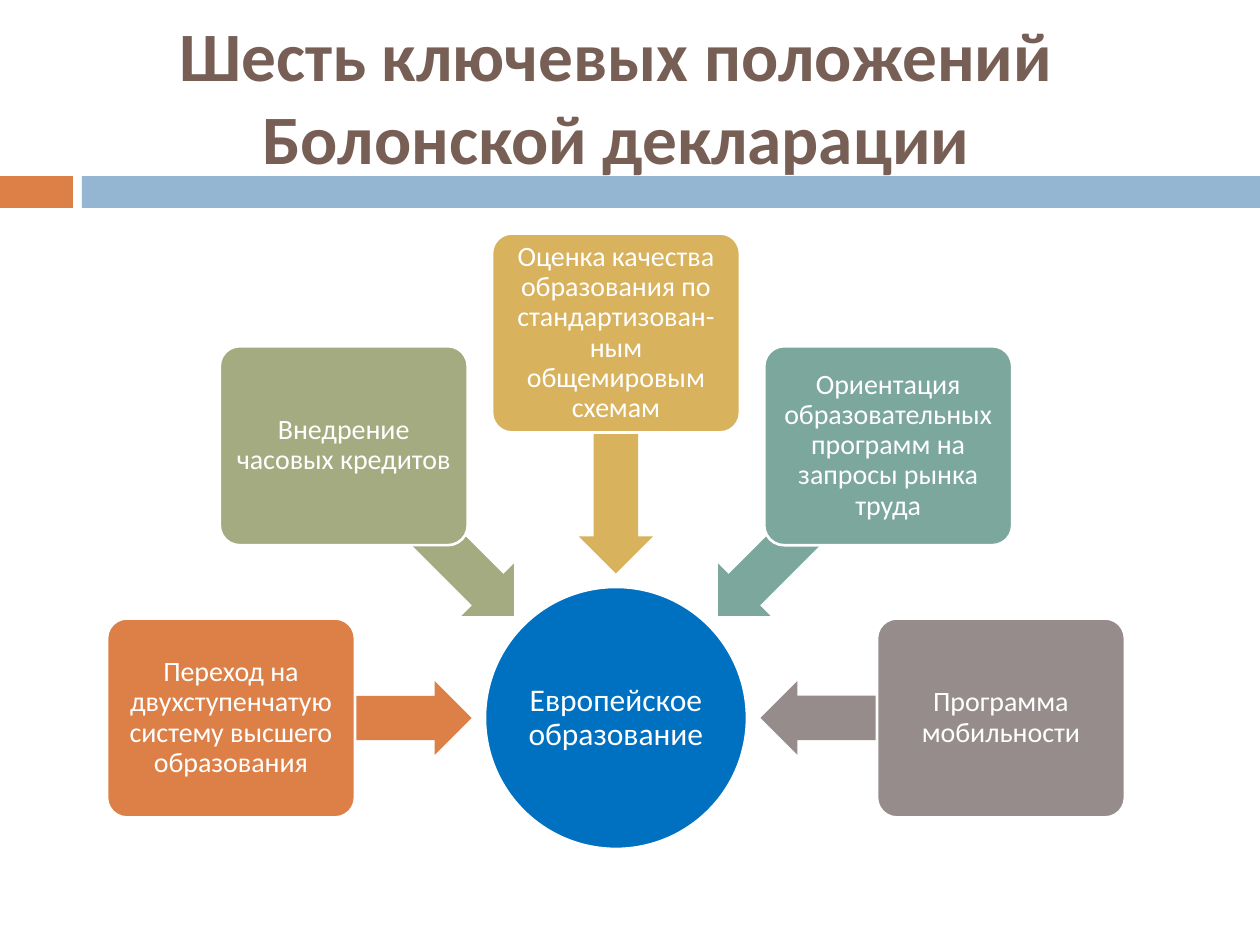
from math import cos, radians, sin

from pptx import Presentation
from pptx.dml.color import RGBColor
from pptx.enum.shapes import MSO_SHAPE
from pptx.enum.text import MSO_ANCHOR, PP_ALIGN
from pptx.util import Emu, Pt

SCALE = 914400 / 126
WHITE = RGBColor(0xFF, 0xFF, 0xFF)
BROWN = RGBColor(0x77, 0x5F, 0x55)
ORANGE = RGBColor(0xDD, 0x80, 0x47)
LIGHT_BLUE = RGBColor(0x94, 0xB6, 0xD2)
BLUE = RGBColor(0x00, 0x70, 0xC0)
OLIVE = RGBColor(0xA5, 0xAB, 0x81)
GOLD = RGBColor(0xD8, 0xB2, 0x5C)
TEAL = RGBColor(0x7B, 0xA7, 0x9D)
GREY = RGBColor(0x96, 0x8C, 0x8C)

PROVISIONS = [
    ("Переход на двухступенчатую систему высшего образования", ORANGE),
    ("Внедрение часовых кредитов", OLIVE),
    ("Оценка качества образования по стандартизован-ным общемировым схемам", GOLD),
    ("Ориентация образовательных программ на запросы рынка труда", TEAL),
    ("Программа мобильности", GREY),
]


def px(length):
    return Emu(round(length * SCALE))


def add_block(slide, preset, box, color, outlined=False):
    block = slide.shapes.add_shape(preset, *map(px, box))
    block.shadow.inherit = False
    block.fill.solid()
    block.fill.fore_color.rgb = color
    if outlined:
        block.line.color.rgb = WHITE
        block.line.width = Pt(1.5)
    else:
        block.line.fill.background()
    return block


def write(holder, text, font_format, inset=None, paragraph_format=None):
    frame = holder.text_frame
    frame.word_wrap = True
    frame.vertical_anchor = MSO_ANCHOR.MIDDLE
    if inset is not None:
        for side in ("left", "top", "right", "bottom"):
            setattr(frame, f"margin_{side}", px(inset))
    paragraph = frame.paragraphs[0]
    paragraph.alignment = PP_ALIGN.CENTER
    for name, value in (paragraph_format or {}).items():
        setattr(paragraph, name, value)
    run = paragraph.add_run()
    run.text = text
    run.font.color.rgb = font_format["color"]
    for name in ("name", "size", "bold"):
        setattr(run.font, name, font_format.get(name))


def add_header(slide, left, top, width, height):
    band_height, accent_width, gap = 32, 73, 9
    band_top = top + height - band_height
    band_left = left + accent_width + gap
    add_block(slide, MSO_SHAPE.RECTANGLE, (left, band_top, accent_width, band_height), ORANGE)
    add_block(slide, MSO_SHAPE.RECTANGLE,
              (band_left, band_top, left + width - band_left, band_height), LIGHT_BLUE)
    title = slide.shapes.add_textbox(*map(px, (left + 54, top + 27, 1124, 136)))
    write(title, "Шесть ключевых положений Болонской декларации",
          {"name": "Calibri", "size": Pt(39.6), "bold": True, "color": BROWN})


def add_radial_diagram(slide, left, top, width, height):
    hub_size, card_width, card_height = 262, 248, 199
    arrow_width, arrow_height = 239, 74
    card_radius, arrow_radius = 385, 264
    center_x = left + width / 2
    center_y = top + height - hub_size / 2
    text_format = {"name": "Calibri", "size": Pt(16), "color": WHITE}
    spacing = {"line_spacing": 0.9}

    def centered(angle, radius, part_width, part_height):
        return (center_x + radius * cos(radians(angle)) - part_width / 2,
                center_y + radius * sin(radians(angle)) - part_height / 2,
                part_width, part_height)

    hub = add_block(slide, MSO_SHAPE.OVAL, centered(0, 0, hub_size, hub_size), BLUE, True)
    write(hub, "Европейское образование", {**text_format, "size": Pt(18)}, 1, spacing)

    for index, (provision, color) in enumerate(PROVISIONS):
        angle = 180 + index * 180 / (len(PROVISIONS) - 1)
        arrow = add_block(slide, MSO_SHAPE.LEFT_ARROW,
                          centered(angle, arrow_radius, arrow_width, arrow_height), color)
        arrow.adjustments[0] = 0.6
        arrow.adjustments[1] = 0.5
        arrow.rotation = angle % 360
        card = add_block(slide, MSO_SHAPE.ROUNDED_RECTANGLE,
                         centered(angle, card_radius, card_width, card_height), color, True)
        card.adjustments[0] = 0.1
        write(card, provision, text_format, 4, spacing)


def main():
    presentation = Presentation()
    presentation.slide_width = px(1260)
    presentation.slide_height = px(945)
    slide = presentation.slides.add_slide(presentation.slide_layouts[6])
    add_header(slide, 0, 0, 1260, 208)
    add_radial_diagram(slide, 107, 234, 1018, 615)
    presentation.save("out.pptx")


if __name__ == "__main__":
    main()
